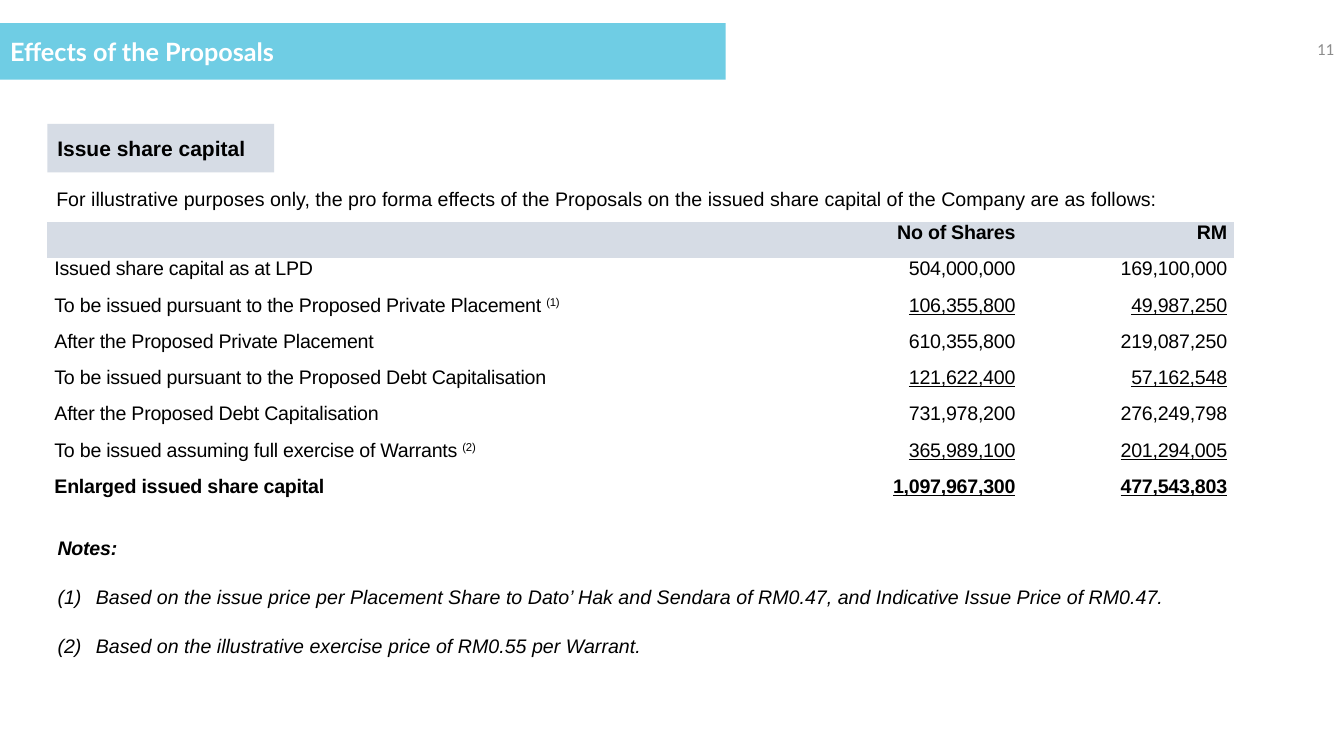
from dataclasses import dataclass

from lxml.etree import SubElement
from pptx import Presentation
from pptx.dml.color import RGBColor as Color
from pptx.enum.shapes import MSO_SHAPE as Shape
from pptx.enum.text import MSO_ANCHOR as Anchor, MSO_AUTO_SIZE as Fit, PP_ALIGN as Align
from pptx.oxml.ns import qn
from pptx.util import Inches, Pt


@dataclass(frozen=True)
class Theme:
    banner: Color = Color.from_string("6FCDE4")
    band: Color = Color.from_string("D6DCE5")
    ink: Color = Color.from_string("000000")
    paper: Color = Color.from_string("FFFFFF")
    muted: Color = Color.from_string("8C8C8C")
    title_font: str = "Lato"
    body_font: str = "Arial"
    number_font: str = "Calibri"
    title_size: int = 18
    tag_size: int = 15
    body_size: int = 14
    number_size: int = 12
    tight: int = -20


@dataclass(frozen=True)
class Box:
    left: int
    top: int
    width: int
    height: int

    def place(self, shape):
        shape.left, shape.top = self.left, self.top
        shape.width, shape.height = self.width, self.height

    def edges(self):
        return self.left, self.top, self.width, self.height


THEME = Theme()
WIDTH, HEIGHT = Inches(13.33), Inches(7.5)
NO_GRID_STYLE = "{2D5ABB26-0587-4C30-8999-92F81FD0307C}"
COLUMNS = (6.9, 2.77, 2.1)
ROWS = (0.36,) * 7 + (0.46,)
HEADINGS = ("", "No of Shares", "RM")
CAPITAL = (
    ("Issued share capital as at LPD", "", "504,000,000", "169,100,000"),
    ("To be issued pursuant to the Proposed Private Placement ", "(1)", "106,355,800", "49,987,250"),
    ("After the Proposed Private Placement", "", "610,355,800", "219,087,250"),
    ("To be issued pursuant to the Proposed Debt Capitalisation", "", "121,622,400", "57,162,548"),
    ("After the Proposed Debt Capitalisation", "", "731,978,200", "276,249,798"),
    ("To be issued assuming full exercise of Warrants ", "(2)", "365,989,100", "201,294,005"),
    ("Enlarged issued share capital", "", "1,097,967,300", "477,543,803"),
)
NOTES = (
    "Based on the issue price per Placement Share to Dato’ Hak and Sendara of RM0.47, "
    "and Indicative Issue Price of RM0.47.",
    "Based on the illustrative exercise price of RM0.55 per Warrant.",
)


def share(left, top, width, height):
    return Box(int(WIDTH * left / 100), int(HEIGHT * top / 100),
               int(WIDTH * width / 100), int(HEIGHT * height / 100))


def style(para, size=THEME.body_size, face=THEME.body_font, color=THEME.ink,
          bold=False, italic=False, underline=False, spacing=0, align=Align.LEFT):
    para.alignment = align
    for font in [para.font] + [span.font for span in para.runs]:
        font.size, font.name = Pt(size), face
        font.bold, font.italic, font.underline = bold, italic, underline
        font.color.rgb = color
    for span in para.runs:
        span._r.get_or_add_rPr().set("spc", str(spacing))


def paint(shape, color):
    shape.fill.solid()
    shape.fill.fore_color.rgb = color
    shape.line.fill.background()


def add_header(page, box):
    title = page.shapes.title
    box.place(title)
    paint(title, THEME.banner)
    frame = title.text_frame
    frame.text = "Effects of the Proposals"
    frame.auto_size, frame.vertical_anchor = Fit.NONE, Anchor.MIDDLE
    style(frame.paragraphs[0], THEME.title_size, THEME.title_font, THEME.paper, bold=True)


def add_label(page, box, text, anchor=Anchor.TOP, **look):
    frame = page.shapes.add_textbox(*box.edges()).text_frame
    frame.word_wrap, frame.vertical_anchor = True, anchor
    frame.text = text
    style(frame.paragraphs[0], **look)


def add_tag(page, box):
    tag = page.shapes.add_shape(Shape.RECTANGLE, *box.edges())
    tag.shadow.inherit = False
    paint(tag, THEME.band)
    frame = tag.text_frame
    frame.text = "Issue share capital"
    frame.vertical_anchor = Anchor.MIDDLE
    style(frame.paragraphs[0], THEME.tag_size, bold=True)


def fill_cell(cell, text, mark="", color=None, **look):
    cell.margin_left = cell.margin_right = Inches(0.07)
    cell.margin_top = cell.margin_bottom = 0
    if color is None:
        cell.fill.background()
    else:
        cell.fill.solid()
        cell.fill.fore_color.rgb = color
    para = cell.text_frame.paragraphs[0]
    para.text = text
    if mark:
        para.add_run().text = mark
    style(para, spacing=THEME.tight, **look)
    if mark:
        para.runs[-1]._r.get_or_add_rPr().set("baseline", "30000")


def add_capital_table(page, box):
    frame = page.shapes.add_table(len(ROWS), len(COLUMNS), *box.edges())
    table = frame.table
    table.horz_banding = False
    table._tbl.tblPr.find(qn("a:tableStyleId")).text = NO_GRID_STYLE
    for column, weight in zip(table.columns, COLUMNS):
        column.width = int(box.width * weight / sum(COLUMNS))
    for row, weight in zip(table.rows, ROWS):
        row.height = int(box.height * weight / sum(ROWS))
    for index, heading in enumerate(HEADINGS):
        fill_cell(table.cell(0, index), heading, color=THEME.band, bold=True, align=Align.RIGHT)
    for index, (label, mark, *figures) in enumerate(CAPITAL, 1):
        total = index == len(CAPITAL)
        summed = total or index % 2 == 0
        fill_cell(table.cell(index, 0), label, mark, bold=total, align=Align.JUSTIFY)
        for column, figure in enumerate(figures, 1):
            fill_cell(table.cell(index, column), figure, bold=total,
                      underline=summed, align=Align.RIGHT)


def set_bullet(para, numbered):
    props = para._p.get_or_add_pPr()
    indent = Inches(0.38) if numbered else 0
    props.set("marL", str(indent))
    props.set("indent", str(-indent))
    if numbered:
        SubElement(props, qn("a:buFont")).set("typeface", THEME.body_font)
        SubElement(props, qn("a:buAutoNum")).set("type", "arabicParenBoth")
    else:
        SubElement(props, qn("a:buNone"))


def add_notes(page, box):
    body = page.placeholders[1]
    box.place(body)
    frame = body.text_frame
    frame.auto_size, frame.vertical_anchor = Fit.NONE, Anchor.TOP
    frame.text = "\n".join(("Notes:",) + NOTES)
    for index, para in enumerate(frame.paragraphs):
        numbered = index > 0
        set_bullet(para, numbered)
        para.space_before = Pt(18 if numbered else 0)
        style(para, bold=not numbered, italic=True, spacing=0 if numbered else THEME.tight)


def build_effects(page):
    add_header(page, share(0, 3.07, 54, 7.47))
    add_label(page, share(77.5, 3.73, 22.5, 5.33), "11", Anchor.MIDDLE, size=THEME.number_size,
              face=THEME.number_font, color=THEME.muted, align=Align.RIGHT)
    add_tag(page, share(3.53, 16.4, 16.87, 6.4))
    add_label(page, share(3.45, 24, 88.65, 4.53),
              "For illustrative purposes only, the pro forma effects of the Proposals "
              "on the issued share capital of the Company are as follows:")
    add_capital_table(page, share(3.53, 29.33, 88.3, 39.73))
    add_notes(page, share(3.53, 70.27, 88.6, 20.13))


def main():
    deck = Presentation()
    deck.slide_width, deck.slide_height = WIDTH, HEIGHT
    build_effects(deck.slides.add_slide(deck.slide_layouts[1]))
    deck.save("out.pptx")


if __name__ == "__main__":
    main()
